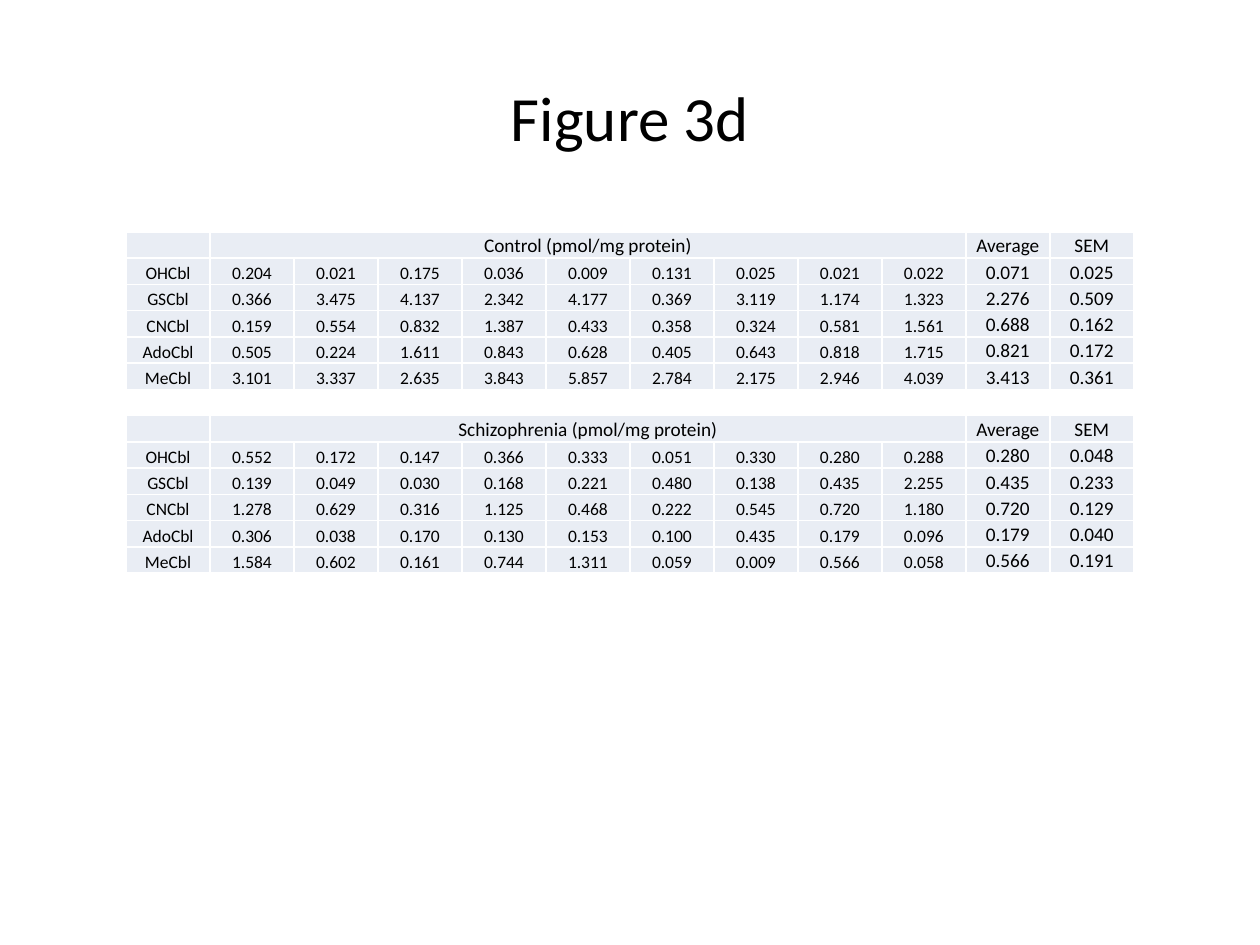
from lxml.etree import SubElement
from pptx import Presentation
from pptx.dml.color import RGBColor
from pptx.enum.text import MSO_ANCHOR, PP_ALIGN
from pptx.oxml.ns import qn
from pptx.util import Inches, Pt

# Content
TITLE = "Figure 3d"
COMPOUNDS = ["OHCbl", "GSCbl", "CNCbl", "AdoCbl", "MeCbl"]
SUMMARY = ["Average", "SEM"]
# Each row: nine samples, then average and SEM
GROUPS = {
    "Control (pmol/mg protein)": [
        "0.204 0.021 0.175 0.036 0.009 0.131 0.025 0.021 0.022 0.071 0.025",
        "0.366 3.475 4.137 2.342 4.177 0.369 3.119 1.174 1.323 2.276 0.509",
        "0.159 0.554 0.832 1.387 0.433 0.358 0.324 0.581 1.561 0.688 0.162",
        "0.505 0.224 1.611 0.843 0.628 0.405 0.643 0.818 1.715 0.821 0.172",
        "3.101 3.337 2.635 3.843 5.857 2.784 2.175 2.946 4.039 3.413 0.361",
    ],
    "Schizophrenia (pmol/mg protein)": [
        "0.552 0.172 0.147 0.366 0.333 0.051 0.330 0.280 0.288 0.280 0.048",
        "0.139 0.049 0.030 0.168 0.221 0.480 0.138 0.435 2.255 0.435 0.233",
        "1.278 0.629 0.316 1.125 0.468 0.222 0.545 0.720 1.180 0.720 0.129",
        "0.306 0.038 0.170 0.130 0.153 0.100 0.435 0.179 0.096 0.179 0.040",
        "1.584 0.602 0.161 0.744 1.311 0.059 0.009 0.566 0.058 0.566 0.191",
    ],
}

# Style and layout
FONT, BLACK, WHITE, CELL_FILL = "Calibri", "000000", "FFFFFF", "E9EDF4"
SAMPLES = 9
COLUMNS = 1 + SAMPLES + len(SUMMARY)
TABLE_LEFT, TABLE_TOP, TABLE_WIDTH, TABLE_HEIGHT = 1, 1.84, 8, 2.71


def color(value):
    return RGBColor.from_string(value)


def add_text(paragraph, text, size):
    paragraph.alignment = PP_ALIGN.CENTER
    run = paragraph.add_run()
    run.text = text
    run.font.name = FONT
    run.font.size = Pt(size)
    run.font.color.rgb = color(BLACK)


def set_borders(cell):
    properties = cell._tc.get_or_add_tcPr()
    for index, side in enumerate(("a:lnL", "a:lnR", "a:lnT", "a:lnB")):
        line = SubElement(properties, qn(side), w=str(Pt(1)))
        fill = SubElement(line, qn("a:solidFill"))
        SubElement(fill, qn("a:srgbClr"), val=WHITE)
        properties.remove(line)
        properties.insert(index, line)


def fill_cell(cell, text, size, filled):
    cell.margin_left = cell.margin_right = cell.margin_top = Inches(0.01)
    cell.margin_bottom = 0
    cell.vertical_anchor = MSO_ANCHOR.BOTTOM
    if filled:
        cell.fill.solid()
        cell.fill.fore_color.rgb = color(CELL_FILL)
    else:
        cell.fill.background()
    set_borders(cell)
    paragraph = cell.text_frame.paragraphs[0]
    if text:
        add_text(paragraph, text, size)
    else:  # keeps empty cells from stretching their row
        SubElement(paragraph._p, qn("a:endParaRPr"), sz=str(size * 100))


def build_rows():
    rows = []
    for heading, records in GROUPS.items():
        if rows:
            rows.append([""] * COLUMNS)
        rows.append(["", heading] + [""] * (SAMPLES - 1) + SUMMARY)
        rows += [[name] + record.split() for name, record in zip(COMPOUNDS, records)]
    return rows


presentation = Presentation()
presentation.slide_width, presentation.slide_height = Inches(10), Inches(7.5)
slide = presentation.slides.add_slide(presentation.slide_layouts[6])

# Title
title = slide.shapes.add_textbox(Inches(0.5), Inches(0.3), Inches(9), Inches(1.25))
title.text_frame.word_wrap = True
title.text_frame.vertical_anchor = MSO_ANCHOR.MIDDLE
add_text(title.text_frame.paragraphs[0], TITLE, 36)

# Table
rows = build_rows()
table = slide.shapes.add_table(
    len(rows), COLUMNS, Inches(TABLE_LEFT), Inches(TABLE_TOP),
    Inches(TABLE_WIDTH), Inches(TABLE_HEIGHT)).table
table.first_row = table.horz_banding = False
for row_index, values in enumerate(rows):
    is_heading = values[1] in GROUPS
    for column_index, value in enumerate(values):
        size = 11 if is_heading or column_index > SAMPLES else 10
        fill_cell(table.cell(row_index, column_index), value, size, any(values))
    if is_heading:
        table.cell(row_index, 1).merge(table.cell(row_index, SAMPLES))

presentation.save("out.pptx")
